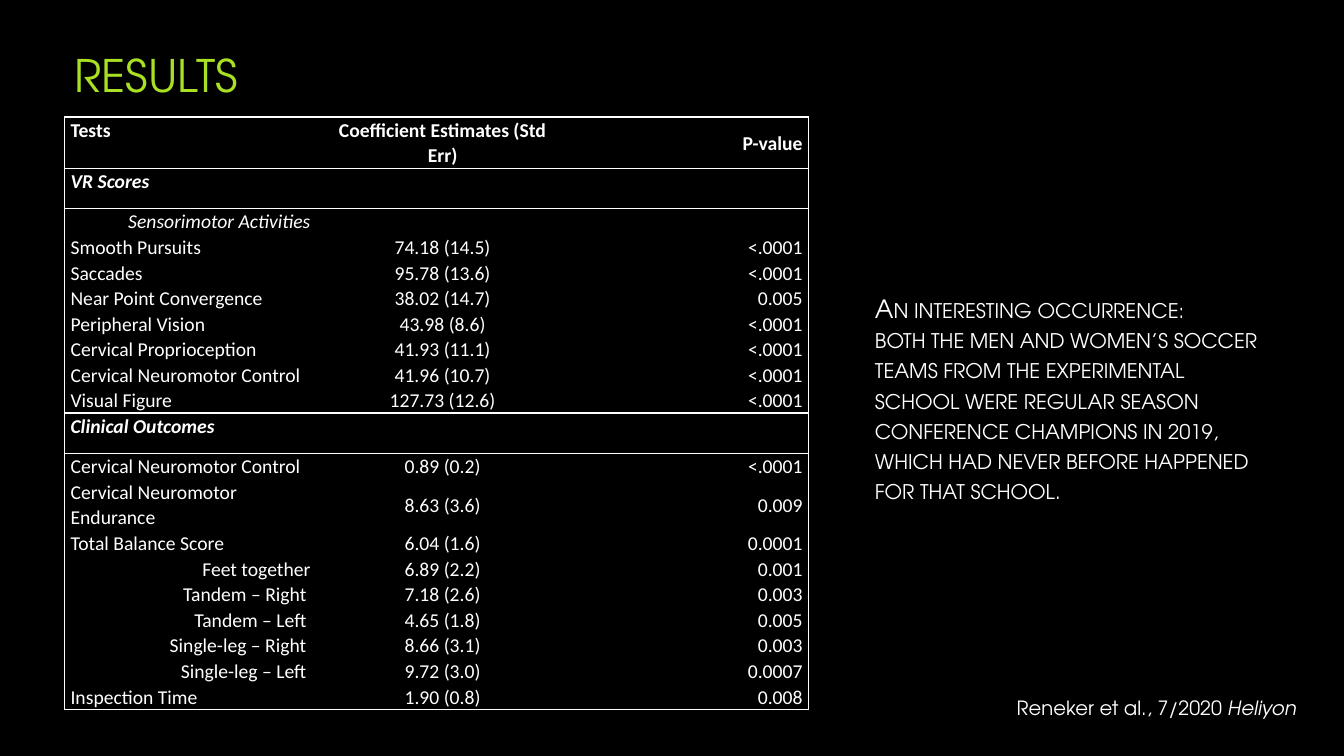
from lxml.etree import SubElement
from pptx import Presentation
from pptx.dml.color import RGBColor
from pptx.enum.text import MSO_ANCHOR, PP_ALIGN
from pptx.oxml.ns import qn
from pptx.util import Inches, Pt

TITLE = "RESULTS"
HEADER = ("Tests", "Coefficient Estimates (Std Err)", "P-value")
SECTIONS = ("VR Scores", "Clinical Outcomes")
SUBHEADING = "Sensorimotor Activities"
VR_SCORES = [
    ("Smooth Pursuits", "74.18 (14.5)", "<.0001"),
    ("Saccades", "95.78 (13.6)", "<.0001"),
    ("Near Point Convergence", "38.02 (14.7)", "0.005"),
    ("Peripheral Vision", "43.98 (8.6)", "<.0001"),
    ("Cervical Proprioception", "41.93 (11.1)", "<.0001"),
    ("Cervical Neuromotor Control", "41.96 (10.7)", "<.0001"),
    ("Visual Figure", "127.73 (12.6)", "<.0001"),
]
CLINICAL_OUTCOMES = [
    ("Cervical Neuromotor Control", "0.89 (0.2)", "<.0001"),
    ("Cervical Neuromotor Endurance", "8.63 (3.6)", "0.009"),
    ("Total Balance Score", "6.04 (1.6)", "0.0001"),
    ("Feet together", "6.89 (2.2)", "0.001"),
    ("Tandem – Right", "7.18 (2.6)", "0.003"),
    ("Tandem – Left", "4.65 (1.8)", "0.005"),
    ("Single-leg – Right", "8.66 (3.1)", "0.003"),
    ("Single-leg – Left", "9.72 (3.0)", "0.0007"),
    ("Inspection Time", "1.90 (0.8)", "0.008"),
]
STANCES = ("Feet together", "Tandem", "Single-leg")
NOTE = [
    "An interesting occurrence:",
    "both the men and women’s soccer teams from the experimental school were regular "
    "season conference champions in 2019, which had never before happened for that school.",
]
CITATION, JOURNAL = "Reneker et al., 7/2020 ", "Heliyon"

THEME = {
    "background": "000000", "text": "FFFFFF", "accent": "A9E023",
    "display": "TeX Gyre Adventor", "body": "Calibri",
    "title_size": 32, "note_size": 18, "table_size": 14,
    "table_spacing": 1.07, "border": 1,
}
COLUMN_WIDTHS = (2.5, 2.5, 2.38)
ROW_HEIGHT, SECTION_HEIGHT, WRAPPED_HEIGHT = 0.25, 0.4, 0.51


def add_text(paragraph, text, size, font=THEME["display"], color=THEME["text"], bold=False,
             italic=False, small_caps=False, align=PP_ALIGN.LEFT, spacing=None):
    paragraph.alignment = align
    paragraph.line_spacing = spacing
    if not text:
        SubElement(paragraph._p, qn("a:endParaRPr"), sz=str(size * 100))
        return
    run = paragraph.add_run()
    run.text = text
    run.font.size, run.font.name = Pt(size), font
    run.font.bold, run.font.italic = bold, italic
    run.font.color.rgb = RGBColor.from_string(color)
    if small_caps:
        run.font._element.set("cap", "small")


def add_text_box(slide, left, top, width, height, lines, **text_format):
    frame = slide.shapes.add_textbox(*map(Inches, (left, top, width, height))).text_frame
    frame.word_wrap = True
    for index, line in enumerate(lines):
        paragraph = frame.add_paragraph() if index else frame.paragraphs[0]
        add_text(paragraph, line, **text_format)


def add_plain_table(slide, left, top, widths, heights):
    box = map(Inches, (left, top, sum(widths), sum(heights)))
    table = slide.shapes.add_table(len(heights), len(widths), *box).table
    table.first_row = table.horz_banding = False
    for column, width in zip(table.columns, widths):
        column.width = Inches(width)
    for row, height in zip(table.rows, heights):
        row.height = Inches(height)
    return table


def finish_cell(cell, sides=""):
    """Rule the named sides (L, R, T, B), clear the others and the fill."""
    properties = cell._tc.get_or_add_tcPr()
    for side in "LRTB":
        line = SubElement(properties, qn(f"a:ln{side}"), w=str(Pt(THEME["border"])))
        if side in sides:
            fill = SubElement(line, qn("a:solidFill"))
            SubElement(fill, qn("a:srgbClr"), val=THEME["text"])
        else:
            SubElement(line, qn("a:noFill"))
    cell.fill.background()


def add_results_table(slide):
    rows = [HEADER, (SECTIONS[0], "", ""), (SUBHEADING, "", ""), *VR_SCORES,
            (SECTIONS[1], "", ""), *CLINICAL_OUTCOMES]
    tall = {HEADER[0]: WRAPPED_HEIGHT, "Cervical Neuromotor Endurance": WRAPPED_HEIGHT,
            SECTIONS[0]: SECTION_HEIGHT, SECTIONS[1]: SECTION_HEIGHT}
    table = add_plain_table(slide, 0.64, 1.16, COLUMN_WIDTHS,
                            [tall.get(row[0], ROW_HEIGHT) for row in rows])
    ruled = [row[0] in (HEADER[0], *SECTIONS) for row in rows]
    last = len(rows) - 1
    for r, row in enumerate(rows):
        name = row[0]
        top = ruled[r] or ruled[r - 1]
        bottom = r == last or ruled[r] or ruled[r + 1]
        indented = name == SUBHEADING or name.startswith(STANCES)
        name_align = PP_ALIGN.RIGHT if indented else PP_ALIGN.LEFT
        for c, align in enumerate((name_align, PP_ALIGN.CENTER, PP_ALIGN.RIGHT)):
            cell = table.cell(r, c)
            cell.margin_left = cell.margin_right = Inches(0.06)
            cell.margin_top = cell.margin_bottom = 0
            if c:
                cell.vertical_anchor = MSO_ANCHOR.MIDDLE
            elif "–" in name:
                cell.margin_right = Inches(0.1)
            add_text(cell.text_frame.paragraphs[0], row[c], THEME["table_size"],
                     font=THEME["body"], bold=ruled[r], align=align,
                     italic=name in (*SECTIONS, SUBHEADING), spacing=THEME["table_spacing"])
            finish_cell(cell, ("L", "", "R")[c] + "T" * top + "B" * bottom)


def add_citation(slide):
    cell = add_plain_table(slide, 9.98, 6.91, [2.98], [0.42]).cell(0, 0)
    paragraph = cell.text_frame.paragraphs[0]
    for text, italic in ((CITATION, False), (JOURNAL, True)):
        add_text(paragraph, text, THEME["table_size"], italic=italic, align=PP_ALIGN.RIGHT)
    finish_cell(cell)


def main():
    presentation = Presentation()
    presentation.slide_width, presentation.slide_height = Inches(13.33), Inches(7.5)
    slide = presentation.slides.add_slide(presentation.slide_layouts[6])
    slide.background.fill.solid()
    slide.background.fill.fore_color.rgb = RGBColor.from_string(THEME["background"])
    add_results_table(slide)
    add_text_box(slide, 0.64, 0.42, 2.15, 0.64, [TITLE],
                 size=THEME["title_size"], color=THEME["accent"])
    add_citation(slide)
    add_text_box(slide, 8.58, 2.86, 4.16, 2.22, NOTE, size=THEME["note_size"], small_caps=True)
    presentation.save("out.pptx")


if __name__ == "__main__":
    main()
